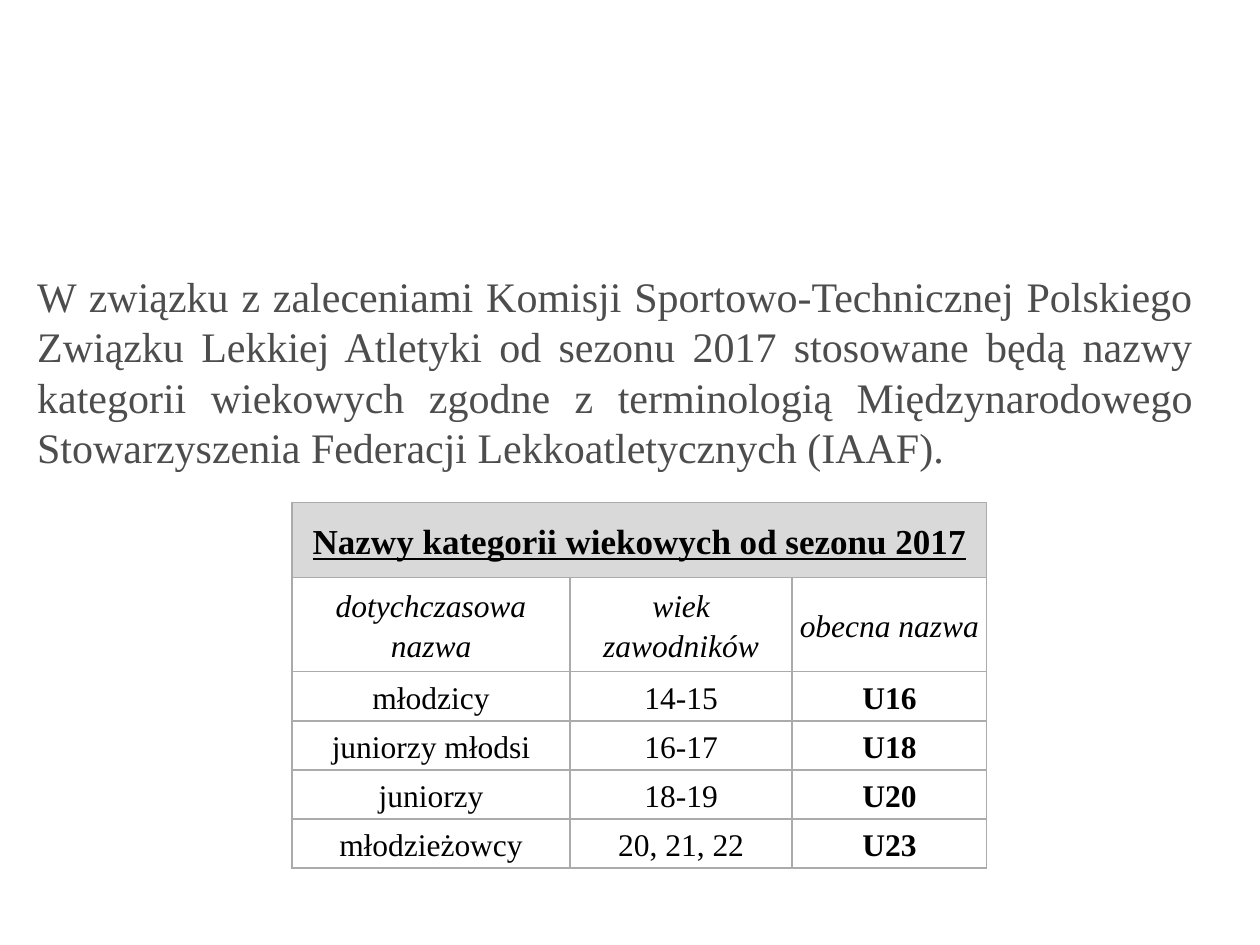
from lxml import etree
from pptx import Presentation
from pptx.dml.color import RGBColor
from pptx.enum.text import MSO_ANCHOR, MSO_AUTO_SIZE, PP_ALIGN
from pptx.oxml.ns import qn
from pptx.util import Cm, Pt

CENTER, JUSTIFY = PP_ALIGN.CENTER, PP_ALIGN.JUSTIFY
MIDDLE = MSO_ANCHOR.MIDDLE
GROW = MSO_AUTO_SIZE.SHAPE_TO_FIT_TEXT

FONT = "Times New Roman"
BLACK = RGBColor(0x00, 0x00, 0x00)
GREY_TEXT = RGBColor(0x4D, 0x4D, 0x4D)
HEADER_FILL = RGBColor(0xD9, 0xD9, 0xD9)
BORDER = RGBColor(0xAB, 0xAB, 0xAB)

INTRO = (
    "W związku z zaleceniami Komisji Sportowo-Technicznej Polskiego Związku "
    "Lekkiej Atletyki od sezonu 2017 stosowane będą nazwy kategorii wiekowych "
    "zgodne z terminologią Międzynarodowego Stowarzyszenia Federacji "
    "Lekkoatletycznych (IAAF)."
)
TABLE_TITLE = "Nazwy kategorii wiekowych od sezonu 2017"
HEADINGS = ("dotychczasowa nazwa", "wiek zawodników", "obecna nazwa")
CATEGORIES = (
    ("młodzicy", "14-15", "U16"),
    ("juniorzy młodsi", "16-17", "U18"),
    ("juniorzy", "18-19", "U20"),
    ("młodzieżowcy", "20, 21, 22", "U23"),
)
COL_SHARES = (0.4, 0.32, 0.28)
ROW_HEIGHTS = (Cm(1.51), Cm(1.9)) + (Cm(0.99),) * len(CATEGORIES)


def add_run(p, text, size, color, bold=False, italic=False, underline=False):
    r = p.add_run()
    r.text = text
    font = r.font
    font.name, font.size = FONT, Pt(size)
    font.bold, font.italic, font.underline = bold, italic, underline
    font.color.rgb = color


def set_borders(cell):
    tc_pr = cell._tc.get_or_add_tcPr()
    for side in ("lnL", "lnR", "lnT", "lnB"):
        line = etree.SubElement(tc_pr, qn(f"a:{side}"), w=str(Pt(1)))
        fill = etree.SubElement(line, qn("a:solidFill"))
        etree.SubElement(fill, qn("a:srgbClr"), val=str(BORDER))


def format_cell(cell, fill=None):
    set_borders(cell)
    if fill is None:
        cell.fill.background()
    else:
        cell.fill.solid()
        cell.fill.fore_color.rgb = fill
    cell.vertical_anchor = MIDDLE
    cell.margin_left = cell.margin_right = Cm(0.02)
    cell.margin_top = cell.margin_bottom = Cm(0.02)


def write_cell(cell, text, size=18, **style):
    p = cell.text_frame.paragraphs[0]
    p.alignment = CENTER
    p.line_spacing = 1.15
    p.space_after = Pt(10)
    add_run(p, text, size, BLACK, **style)


def add_intro(s, left, top, width, height):
    tf = s.shapes.add_textbox(left, top, width, height).text_frame
    tf.word_wrap = True
    tf.auto_size = GROW
    p = tf.paragraphs[0]
    p.alignment = JUSTIFY
    add_run(p, INTRO, 24, GREY_TEXT)


def add_category_table(s, left, top, width):
    table = s.shapes.add_table(
        len(ROW_HEIGHTS), len(COL_SHARES), left, top, width, sum(ROW_HEIGHTS)
    ).table
    table.first_row = table.horz_banding = False
    for column, share in zip(table.columns, COL_SHARES):
        column.width = int(width * share)
    for i, (row, height) in enumerate(zip(table.rows, ROW_HEIGHTS)):
        row.height = height
        for cell in row.cells:
            format_cell(cell, HEADER_FILL if i == 0 else None)

    last = len(COL_SHARES) - 1
    title = table.cell(0, 0)
    title.merge(table.cell(0, last))
    write_cell(title, TABLE_TITLE, 20, bold=True, underline=True)
    for col, text in enumerate(HEADINGS):
        write_cell(table.cell(1, col), text, italic=True)
    for i, values in enumerate(CATEGORIES, start=2):
        for col, text in enumerate(values):
            write_cell(table.cell(i, col), text, bold=col == last)


def main():
    prs = Presentation()
    prs.slide_width, prs.slide_height = Cm(25.4), Cm(19.05)
    s = prs.slides.add_slide(prs.slide_layouts[6])
    add_category_table(s, Cm(5.89), Cm(10.13), Cm(14))
    add_intro(s, Cm(0.5), Cm(5.33), Cm(23.8), Cm(4.37))
    prs.save("out.pptx")


if __name__ == "__main__":
    main()
